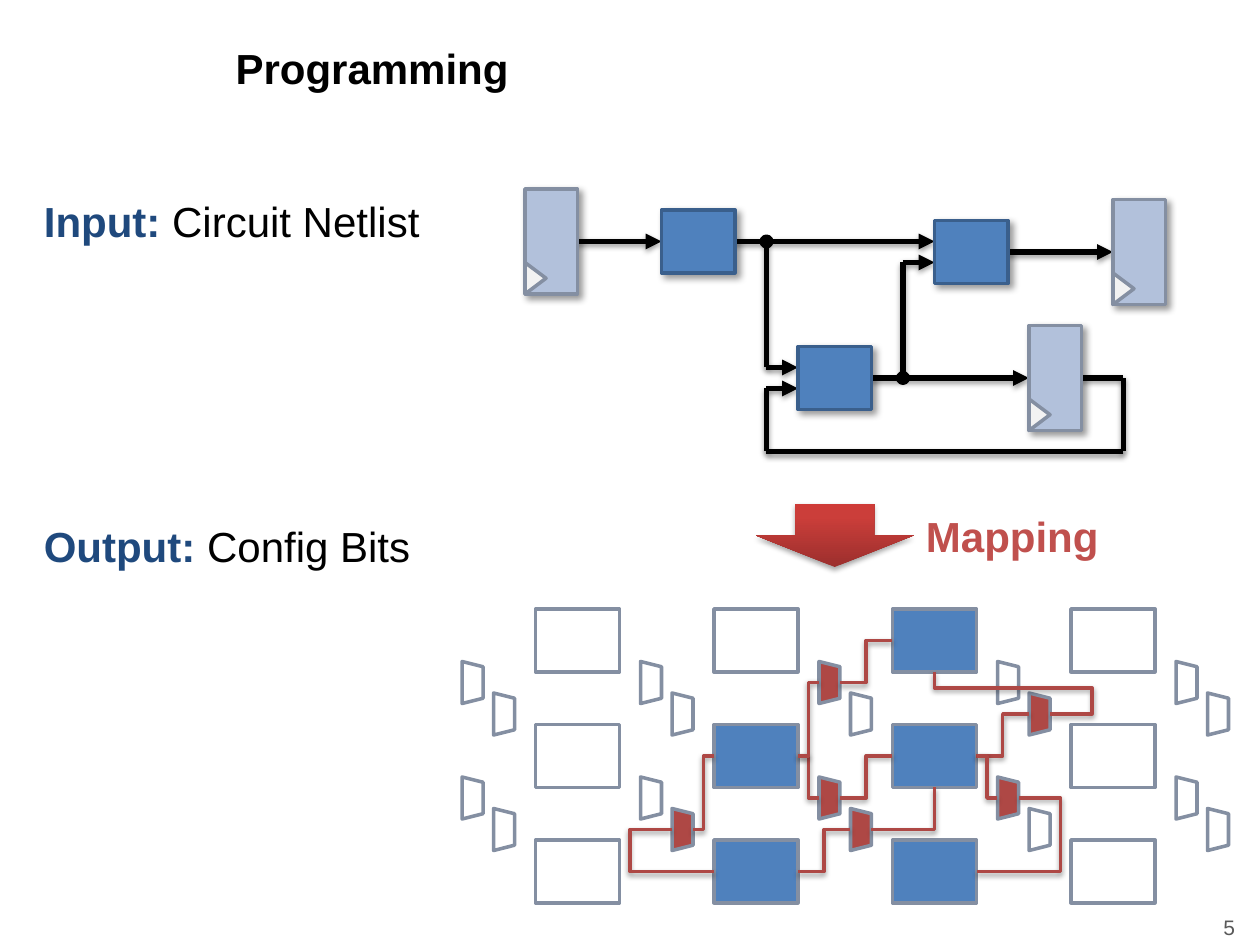
from lxml import etree
from pptx import Presentation
from pptx.dml.color import RGBColor
from pptx.enum.shapes import MSO_CONNECTOR, MSO_SHAPE
from pptx.enum.text import MSO_ANCHOR, PP_ALIGN
from pptx.oxml.ns import qn
from pptx.util import Inches, Pt

RECT, OVAL = MSO_SHAPE.RECTANGLE, MSO_SHAPE.OVAL
TRIANGLE, TRAPEZOID = MSO_SHAPE.ISOSCELES_TRIANGLE, MSO_SHAPE.TRAPEZOID
DOWN_ARROW = MSO_SHAPE.DOWN_ARROW
STRAIGHT, ELBOW = MSO_CONNECTOR.STRAIGHT, MSO_CONNECTOR.ELBOW
LEFT, RIGHT = PP_ALIGN.LEFT, PP_ALIGN.RIGHT
TOP, MIDDLE = MSO_ANCHOR.TOP, MSO_ANCHOR.MIDDLE

BLACK, WHITE, GREY = "000000", "FFFFFF", "848FA2"
NAVY, BLUE, BLUE_EDGE = "1F497D", "4F81BD", "3A5F8C"
PALE_BLUE, PALE_GREY = "B2C1DB", "F2F2F2"
RED, ROUTE_RED = "C0504D", "AE4845"

# Shadows: opacity %, blur pt, distance pt, direction in degrees
WIRE_SHADOW = (38, 3.1, 1.6, 90)
BLOCK_SHADOW = (40, 4, 3, 45)
ARROW_SHADOW = (35, 3.1, 1.8, 90)


def rgb(value):
    return RGBColor.from_string(value)


def grid(cells):
    """Length of a number of grid cells, twelve to the inch."""
    return Inches(cells / 12)


def xml_child(parent, tag, **attributes):
    values = {name: str(value) for name, value in attributes.items()}
    return etree.SubElement(parent, qn(tag), values)


def write(paragraph, text, size=24, color=BLACK, bold=False):
    run = paragraph.add_run()
    run.text = text
    run.font.name, run.font.size, run.font.bold = "Arial", Pt(size), bold
    run.font.color.rgb = rgb(color)


class Diagram:
    def __init__(self, slide):
        self.slide = slide
        self.shapes = slide.shapes

    def title(self, text, x, y, w, h):
        title = self.slide.shapes.title
        title.left, title.top, title.width, title.height = map(Inches, (x, y, w, h))
        title.text_frame.vertical_anchor = MIDDLE
        paragraph = title.text_frame.paragraphs[0]
        paragraph.alignment = LEFT
        write(paragraph, text, bold=True)

    def label(self, runs, x, y, w, h, align=LEFT, anchor=TOP, wrap=False):
        box = self.shapes.add_textbox(*map(Inches, (x, y, w, h)))
        box.text_frame.word_wrap = wrap
        box.text_frame.vertical_anchor = anchor
        paragraph = box.text_frame.paragraphs[0]
        paragraph.alignment = align
        for text, style in runs:
            write(paragraph, text, **style)

    def effects(self, item, shadow):
        effects = xml_child(item._element.spPr, "a:effectLst")
        if shadow:
            opacity, blur, distance, angle = shadow
            outer = xml_child(effects, "a:outerShdw", blurRad=Pt(blur), dist=Pt(distance),
                              dir=angle * 60000, rotWithShape=0)
            color = xml_child(outer, "a:srgbClr", val=BLACK)
            xml_child(color, "a:alpha", val=opacity * 1000)

    def shape(self, kind, x, y, w, h, fill, edge=GREY, shadow=None, turn=0):
        item = self.shapes.add_shape(kind, *map(grid, (x, y, w, h)))
        item.rotation = turn
        item.fill.solid()
        item.fill.fore_color.rgb = rgb(fill)
        item.line.color.rgb = rgb(edge)
        item.line.width = Pt(2)
        self.effects(item, shadow)

    def line(self, kind, ends, color, width, arrow=False):
        item = self.shapes.add_connector(kind, *map(grid, ends))
        item.line.color.rgb = rgb(color)
        item.line.width = Pt(width)
        if arrow:
            xml_child(item.line._get_or_add_ln(), "a:tailEnd", type="triangle")
        self.effects(item, WIRE_SHADOW)
        return item

    def route(self, ends, preset="bentConnector3", bends=()):
        item = self.line(ELBOW, ends, ROUTE_RED, 2)
        geometry = item._element.spPr.find(qn("a:prstGeom"))
        geometry.set("prst", preset)
        for number, bend in enumerate(bends, 1):
            xml_child(geometry.find(qn("a:avLst")), "a:gd", name=f"adj{number}",
                      fmla=f"val {round(bend * 100000)}")

    def register(self, x, y):
        self.shape(RECT, x, y, 5, 10, PALE_BLUE, shadow=BLOCK_SHADOW)
        self.shape(TRIANGLE, x - 0.5, y + 7.5, 3, 2, PALE_GREY, turn=90)

    def mapping_arrow(self, x, y, w, h):
        arrow = self.shapes.add_shape(DOWN_ARROW, *map(grid, (x, y, w, h)))
        arrow.fill.gradient()
        arrow.fill.gradient_angle = 90
        stops = arrow._element.spPr.find(".//" + qn("a:gsLst"))
        stops.clear()
        for share, color in ((0, "9C2F2D"), (80, "CB3E3A"), (100, "CE3B37")):
            stop = xml_child(stops, "a:gs", pos=share * 1000)
            xml_child(stop, "a:srgbClr", val=color)
        arrow.line.fill.background()
        self.effects(arrow, ARROW_SHADOW)


def draw_netlist(diagram):
    diagram.shapes = diagram.slide.shapes.add_group_shape().shapes
    arrows = [(55, 23, 63, 23), (70, 23, 89, 23), (73, 35, 76, 35), (96, 24, 106, 24),
              (83, 36, 98, 36), (73, 37, 76, 37), (86, 25, 89, 25)]
    wires = [(73, 23, 73, 35), (107, 43, 73, 43), (73, 37, 73, 43),
             (107, 36, 107, 43), (103, 36, 107, 36), (86, 25, 86, 36)]
    for ends in arrows + wires:
        diagram.line(STRAIGHT, ends, BLACK, 3, arrow=ends in arrows)
    for x, y in ((73, 23), (86, 36)):
        diagram.shape(OVAL, x - 0.5, y - 0.5, 1, 1, BLACK, BLACK)
    for x, y in ((63, 20), (89, 21), (76, 33)):
        diagram.shape(RECT, x, y, 7, 6, BLUE, BLUE_EDGE, BLOCK_SHADOW)
    for x, y in ((50, 18), (106, 19), (98, 31)):
        diagram.register(x, y)
    diagram.shapes = diagram.slide.shapes


def draw_fabric(diagram):
    column_pitch, row_pitch = 17, 11
    # Logic blocks, the used ones as (row, column)
    used_blocks = {(0, 2), (1, 1), (1, 2), (2, 1), (2, 2)}
    for row in range(3):
        for column in range(4):
            diagram.shape(RECT, 51 + column * column_pitch, 58 + row * row_pitch, 8, 6,
                          BLUE if (row, column) in used_blocks else WHITE)
    # Multiplexers in pairs, the used ones as (row, column, place in pair)
    used_muxes = {(0, 2, 0), (0, 3, 1), (1, 1, 1), (1, 2, 0), (1, 2, 1), (1, 3, 0)}
    for row in range(2):
        for column in range(5):
            for place in range(2):
                diagram.shape(TRAPEZOID, 43 + column * column_pitch + 3 * place,
                              64 + row * row_pitch + 3 * place, 4, 2,
                              ROUTE_RED if (row, column, place) in used_muxes else WHITE,
                              turn=90)
    # Routed connections
    for ends in ((76, 72, 78, 76), (80, 76, 85, 72), (80, 65, 85, 61), (76, 72, 78, 65),
                 (93, 72, 98, 68), (93, 72, 95, 76), (76, 83, 81, 79), (66, 79, 68, 72)):
        diagram.route(ends, bends=[0.5])
    for ends in ((93, 83, 97, 76), (68, 83, 64, 79)):
        diagram.route(ends, bends=[2])
    diagram.route((83, 79, 89, 75), "bentConnector2")
    diagram.route((100, 68, 89, 64), "bentConnector4", [-4 / 11, 5 / 8])


def main():
    deck = Presentation()
    deck.slide_width, deck.slide_height = Inches(10), Inches(7.5)
    diagram = Diagram(deck.slides.add_slide(deck.slide_layouts[5]))

    # Headings
    diagram.title("Programming", 1.77, 0.13, 7.3, 0.81)
    diagram.label([("5", {"size": 12, "color": "595959"})], 7.57, 7.22, 2.33, 0.28,
                  RIGHT, MIDDLE, wrap=True)
    heading = {"color": NAVY, "bold": True}
    diagram.label([("Input:", heading), (" Circuit Netlist", {})], 0.25, 1.5, 3.21, 0.5)
    diagram.label([("Output: ", heading), ("Config Bits", {})], 0.25, 4.08, 3.14, 0.5)

    # Circuit, its mapping and the configured fabric
    draw_netlist(diagram)
    draw_fabric(diagram)
    diagram.mapping_arrow(72, 48, 15, 6)
    diagram.label([("Mapping", {"color": RED, "bold": True})], 7.25, 4, 1.58, 0.5)
    deck.save("out.pptx")


if __name__ == "__main__":
    main()
